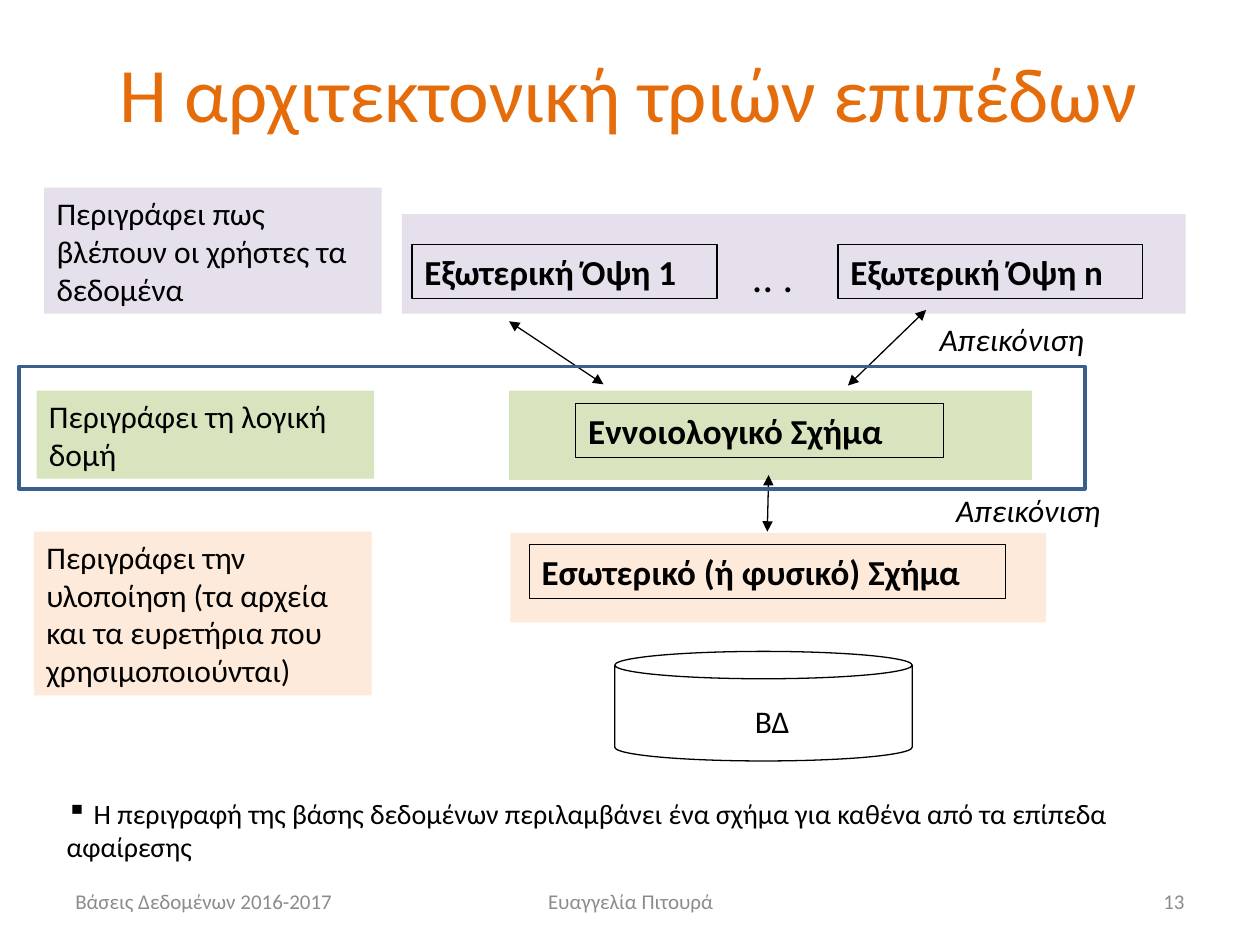
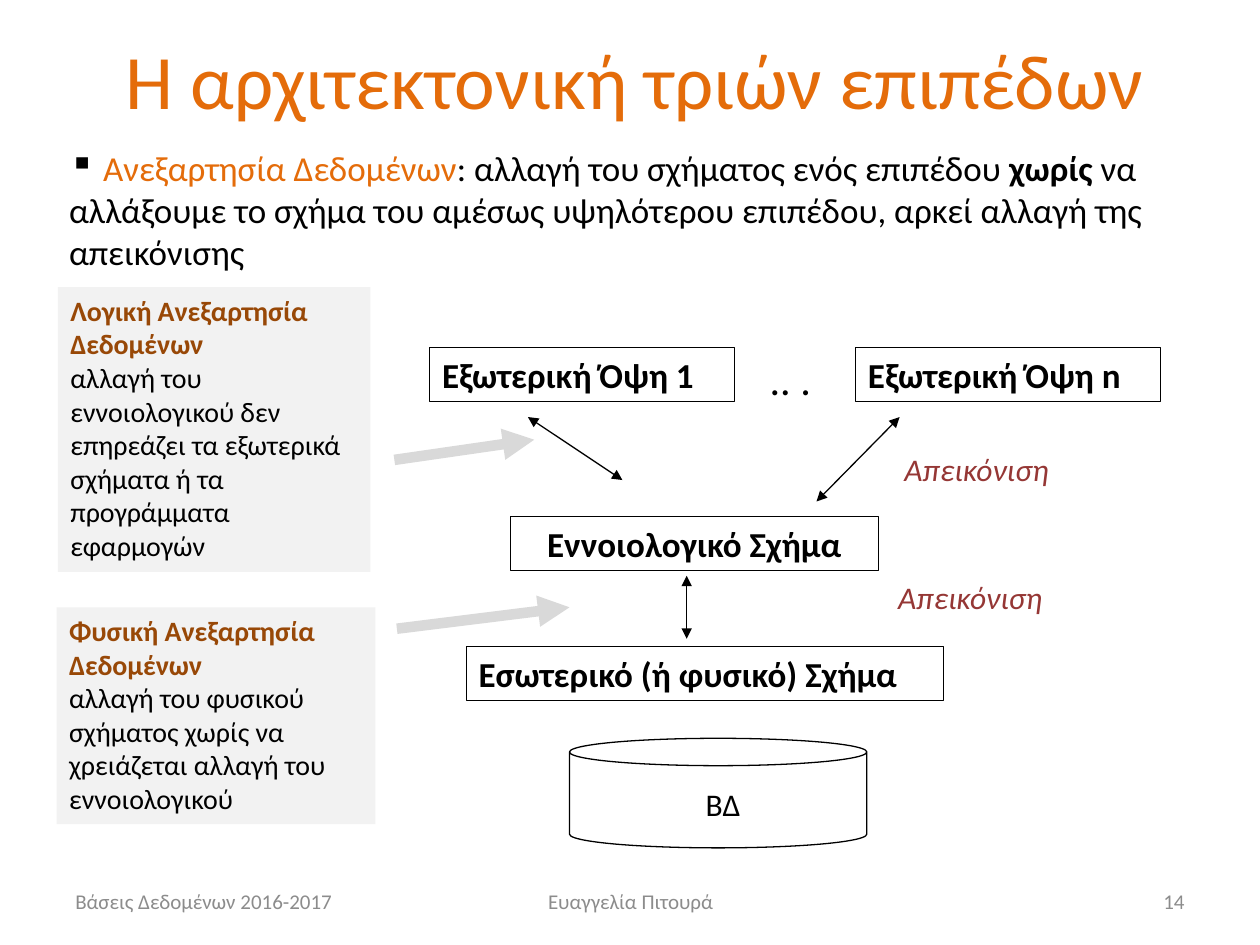
"""Two slides on the three-level database architecture."""
from lxml import etree
from pptx import Presentation
from pptx.dml.color import RGBColor
from pptx.enum.shapes import MSO_CONNECTOR, MSO_SHAPE
from pptx.enum.text import MSO_ANCHOR, PP_ALIGN
from pptx.oxml.ns import qn
from pptx.util import Inches, Pt

RECT, CAN = MSO_SHAPE.RECTANGLE, MSO_SHAPE.CAN
STRAIGHT = MSO_CONNECTOR.STRAIGHT
TOP, MIDDLE = MSO_ANCHOR.TOP, MSO_ANCHOR.MIDDLE
LEFT, CENTER, RIGHT = PP_ALIGN.LEFT, PP_ALIGN.CENTER, PP_ALIGN.RIGHT

FONT = "Calibri"
COLORS = {
    "text": "000000",
    "title": "E46C0A",
    "footer": "8C8C8C",
    "external": "E6E0EC",
    "conceptual": "D7E4BD",
    "internal": "FDEADA",
    "frame": "3A5F8C",
    "note": "F2F2F2",
    "heading": "984807",
    "mapping": "953735",
    "pointer": "D9D9D9",
}
TITLE = "Η αρχιτεκτονική τριών επιπέδων"
COURSE = "Βάσεις Δεδομένων 2016-2017"
AUTHOR = "Ευαγγελία Πιτουρά"
CONCEPTUAL = "Εννοιολογικό Σχήμα"
INTERNAL = "Εσωτερικό (ή φυσικό) Σχήμα"


def rgb(name):
    """Return the named colour."""
    return RGBColor.from_string(COLORS[name])


def add_run(p, text, size, color="text", bold=False, italic=False):
    """Append one styled run to a paragraph."""
    r = p.add_run()
    r.text = text
    r.font.name = FONT
    r.font.size = Pt(size)
    r.font.color.rgb = rgb(color)
    r.font.bold = bold
    r.font.italic = italic


def prepare(sp, align=LEFT, anchor=TOP):
    """Set up the text frame of a shape and return its first paragraph."""
    tf = sp.text_frame
    tf.word_wrap = True
    tf.vertical_anchor = anchor
    p = tf.paragraphs[0]
    p.alignment = align
    return p


def add_label(s, x, y, w, h, text, size, color="text", align=LEFT, anchor=TOP, italic=False):
    """Add a text box holding a single run."""
    sp = s.shapes.add_textbox(Inches(x), Inches(y), Inches(w), Inches(h))
    add_run(prepare(sp, align, anchor), text, size, color, italic=italic)


def add_block(s, x, y, w, h, fill=None, line=None, width=0.75, kind=RECT):
    """Add a preset shape with an optional fill and outline."""
    sp = s.shapes.add_shape(kind, Inches(x), Inches(y), Inches(w), Inches(h))
    sp.shadow.inherit = False
    if fill:
        sp.fill.solid()
        sp.fill.fore_color.rgb = rgb(fill)
    else:
        sp.fill.background()
    if line:
        sp.line.color.rgb = rgb(line)
        sp.line.width = Pt(width)
    else:
        sp.line.fill.background()
    return sp


def add_schema(s, x, y, w, text, align=LEFT):
    """Add an outlined box naming a schema or view."""
    sp = add_block(s, x, y, w, 0.43, line="text")
    add_run(prepare(sp, align), text, 20, bold=True)


def add_description(s, x, y, h, fill, text):
    """Add a filled box describing one level."""
    sp = add_block(s, x, y, 2.68, h, fill)
    add_run(prepare(sp), text, 18)


def add_note(s, x, y, w, h, heading, body):
    """Add a grey note with a bold heading above its body."""
    sp = add_block(s, x, y, w, h, "note")
    add_run(prepare(sp), heading, 16, "heading", bold=True)
    p = sp.text_frame.add_paragraph()
    p.alignment = LEFT
    add_run(p, body, 16)


def add_arrow(s, start, end, color="text", width=0.75, ends=("headEnd", "tailEnd")):
    """Add a straight arrow with triangles at the given ends."""
    points = [Inches(v) for v in (*start, *end)]
    c = s.shapes.add_connector(STRAIGHT, *points)
    c.line.color.rgb = rgb(color)
    c.line.width = Pt(width)
    ln = c.line._get_or_add_ln()
    for end_name in ends:
        etree.SubElement(ln, qn(f"a:{end_name}"), type="triangle")
    etree.SubElement(c._element.spPr, qn("a:effectLst"))


def add_pointer(s, start, end):
    """Add a thick grey arrow from a note to a mapping."""
    add_arrow(s, start, end, "pointer", 6, ("tailEnd",))


def add_bullet(s, x, y, h, size, parts):
    """Add a square-bulleted paragraph of (text, colour, bold) parts."""
    sp = s.shapes.add_textbox(Inches(x), Inches(y), Inches(8.9), Inches(h))
    p = prepare(sp)
    pPr = p._p.get_or_add_pPr()
    etree.SubElement(pPr, qn("a:buChar"), char="▪")
    for text, color, bold in parts:
        add_run(p, text, size, color, bold)


def add_views(s, x, y):
    """Add the row of external views."""
    add_schema(s, x, y, 2.42, "Εξωτερική Όψη 1")
    add_schema(s, x + 3.38, y, 2.42, "Εξωτερική Όψη n")
    add_label(s, x + 2.6, y, 0.63, 0.5, ".. .", 24)


def add_mapping(s, x, y, color="text"):
    """Add the italic mapping label."""
    add_label(s, x, y, 2.42, 0.4, "Απεικόνιση", 18, color, italic=True)


def add_database(s, x, y, label_x, label_y):
    """Add the database cylinder and its label."""
    add_block(s, x, y, 2.36, 0.87, line="text", kind=CAN)
    add_label(s, label_x, label_y, 2.52, 0.4, " ΒΔ", 18, align=CENTER)


def add_base(prs, number, title_x, title_y):
    """Add a slide with the shared title and footers."""
    s = prs.slides.add_slide(prs.slide_layouts[6])
    add_label(s, title_x, title_y, 9, 1.25, TITLE, 44, "title", CENTER, MIDDLE)
    footers = (
        (0.5, 2.33, COURSE, LEFT),
        (3.42, 3.17, AUTHOR, CENTER),
        (7.17, 2.33, str(number), RIGHT),
    )
    for x, w, text, align in footers:
        add_label(s, x, 6.95, w, 0.4, text, 12, "footer", align, MIDDLE)
    return s


def build_levels(prs):
    """Build the slide that describes the three levels."""
    s = add_base(prs, 13, 0.49, 0.1)
    add_block(s, 3.19, 1.7, 6.22, 0.79, "external")
    add_block(s, 4.04, 3.1, 4.15, 0.71, "conceptual")
    add_block(s, 4.05, 4.23, 4.25, 0.71, "internal")
    add_views(s, 3.27, 1.94)
    add_schema(s, 4.57, 3.2, 2.92, CONCEPTUAL)
    add_schema(s, 4.2, 4.32, 3.78, INTERNAL)
    add_database(s, 4.88, 5.17, 4.84, 5.52)
    add_arrow(s, (7.35, 2.46), (6.73, 3.06))
    add_arrow(s, (4.04, 2.55), (4.79, 3.05))
    add_arrow(s, (6.1, 3.77), (6.09, 4.22))
    add_mapping(s, 7.36, 2.49)
    add_mapping(s, 7.49, 3.85)
    add_description(s, 0.35, 1.49, 1, "external",
                    "Περιγράφει πως βλέπουν οι χρήστες τα δεδομένα")
    add_description(s, 0.29, 3.1, 0.7, "conceptual", "Περιγράφει τη λογική δομή")
    add_description(s, 0.27, 4.22, 1.3, "internal",
                    "Περιγράφει την υλοποίηση (τα αρχεία και τα ευρετήρια που χρησιμοποιούνται)")
    add_bullet(s, 0.43, 6.27, 0.64, 16, [
        (" Η περιγραφή της βάσης δεδομένων περιλαμβάνει ένα σχήμα "
         "για καθένα από τα επίπεδα αφαίρεσης", "text", False),
    ])
    add_block(s, 0.15, 2.91, 8.46, 0.97, line="frame", width=2)


def build_independence(prs):
    """Build the slide on data independence."""
    s = add_base(prs, 14, 0.54, 0)
    add_bullet(s, 0.45, 1.11, 1.11, 20, [
        (" ", "text", False),
        ("Ανεξαρτησία Δεδομένων", "title", False),
        (": αλλαγή του σχήματος ενός επιπέδου ", "text", False),
        ("χωρίς", "text", True),
        (" να αλλάξουμε το σχήμα του αμέσως υψηλότερου επιπέδου, "
         "αρκεί αλλαγή της απεικόνισης", "text", False),
    ])
    add_views(s, 3.41, 2.76)
    add_schema(s, 4.05, 4.1, 2.92, CONCEPTUAL, CENTER)
    add_schema(s, 3.7, 5.13, 3.79, INTERNAL)
    add_database(s, 4.52, 5.86, 4.45, 6.18)
    add_arrow(s, (7.14, 3.31), (6.48, 3.98))
    add_arrow(s, (4.19, 3.31), (4.94, 3.81))
    add_arrow(s, (5.45, 4.57), (5.45, 5.07))
    add_mapping(s, 7.08, 3.52, "mapping")
    add_mapping(s, 7.03, 4.54, "mapping")
    add_note(s, 0.46, 2.28, 2.48, 2.26, "Λογική Ανεξαρτησία Δεδομένων",
             "αλλαγή του εννοιολογικού δεν επηρεάζει τα εξωτερικά σχήματα "
             "ή τα προγράμματα εφαρμογών")
    add_note(s, 0.45, 4.82, 2.53, 1.72, "Φυσική Ανεξαρτησία Δεδομένων",
             "αλλαγή του φυσικού σχήματος χωρίς να χρειάζεται αλλαγή του εννοιολογικού")
    add_pointer(s, (3.13, 3.65), (4.24, 3.49))
    add_pointer(s, (3.15, 4.99), (4.52, 4.82))


def main():
    """Create and save the presentation."""
    prs = Presentation()
    prs.slide_width, prs.slide_height = Inches(10), Inches(7.5)
    build_levels(prs)
    build_independence(prs)
    prs.save("out.pptx")


if __name__ == "__main__":
    main()
